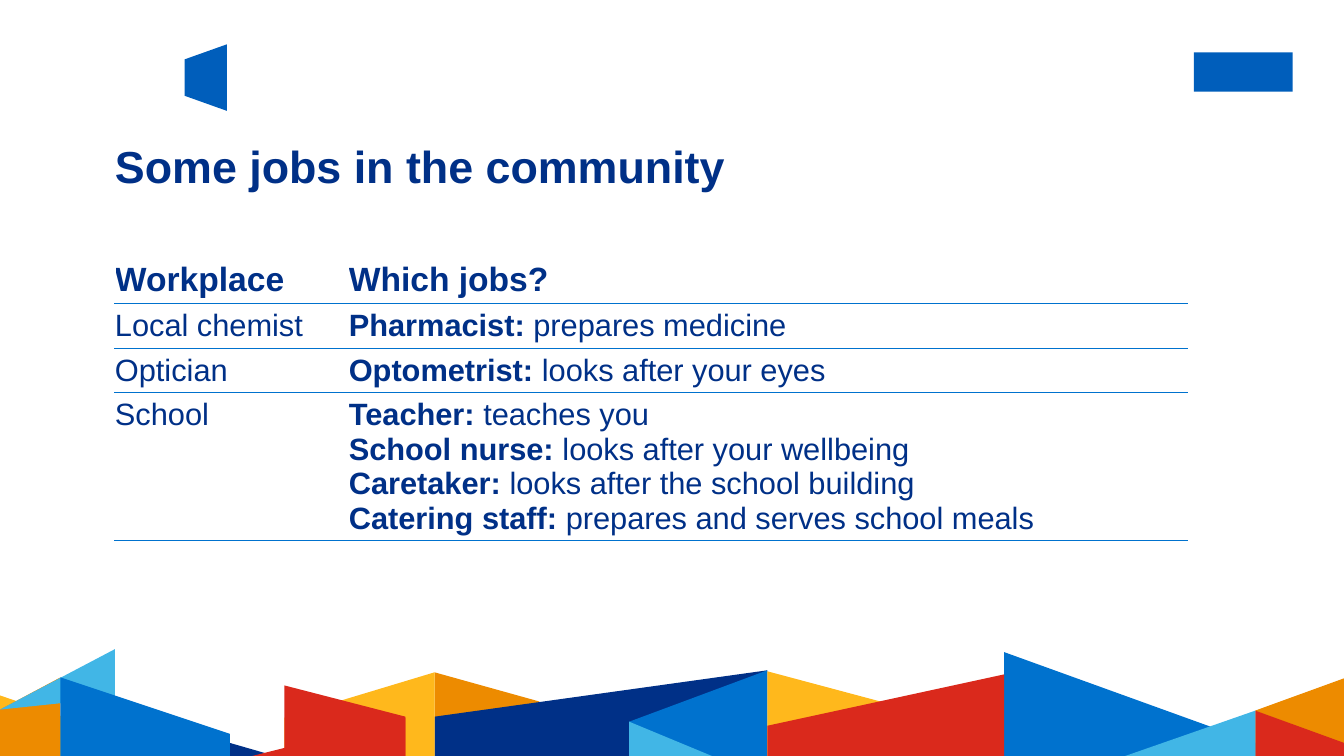
from pptx import Presentation
from pptx.dml.color import RGBColor
from pptx.enum.shapes import MSO_SHAPE
from pptx.enum.text import MSO_ANCHOR, PP_ALIGN
from pptx.oxml import parse_xml
from pptx.oxml.ns import nsdecls
from pptx.util import Inches, Pt

RECTANGLE = MSO_SHAPE.RECTANGLE
TOP = MSO_ANCHOR.TOP
LEFT = PP_ALIGN.LEFT

# Content
TITLE = "Some jobs in the community"
HEADERS = ["Workplace", "Which jobs?"]
WORKPLACES = [
    ("Local chemist", [("Pharmacist: ", "prepares medicine")]),
    ("Optician", [("Optometrist: ", "looks after your eyes")]),
    ("School", [
        ("Teacher: ", "teaches you"),
        ("School nurse: ", "looks after your wellbeing"),
        ("Caretaker: ", "looks after the school building"),
        ("Catering staff: ", "prepares and serves school meals"),
    ]),
]

# Palette
FONT = "Arial"
NAVY, BLUE, SKY, BADGE = "003087", "0072CE", "41B6E6", "005EBB"
ORANGE, YELLOW, RED = "ED8B00", "FFB81C", "DA291C"

# Layout, in inches
W, H = 13.33, 7.5
MARGIN, CONTENT_W = 1.14, 10.64
COLUMNS = [2.32, 8.32]
HEADER_H, LINE_H, PADDING = 0.42, 0.34, 0.05

# Footer wedges, back to front: colour and corner points
WEDGES = [
    (ORANGE, [(4.31, H), (4.31, 6.67), (5.35, 6.96), (5.35, 7.21)]),
    (NAVY, [(4.31, H), (4.31, 7.11), (7.61, 6.65), (7.61, H)]),
    (ORANGE, [(12.45, H), (12.45, 7.05), (W, 6.73), (W, H)]),
    (YELLOW, [(0, H), (0, 6.9), (0.95, 7.22), (0.95, H)]),
    (YELLOW, [(2.82, H), (2.82, 7.12), (4.31, 6.67), (4.31, H)]),
    (ORANGE, [(0, H), (0, 7.04), (0.6, 6.72), (0.6, H)]),
    (RED, [(2.82, H), (2.82, 6.8), (4.02, 7.11), (4.02, H)]),
    (NAVY, [(1.76, H), (1.76, 7.22), (2.73, H)]),
    (RED, [(2.5, H), (4.02, 7.12), (4.02, H)]),
    (SKY, [(0, 7.04), (1.14, 6.44), (1.14, 6.92)]),
    (BLUE, [(0.6, H), (0.6, 6.72), (2.28, 7.28), (2.28, H)]),
    (BLUE, [(6.24, H), (6.24, 7.16), (7.61, 6.65), (7.61, H)]),
    (SKY, [(6.24, H), (6.24, 7.16), (7.06, H)]),
    (BLUE, [(9.96, H), (9.96, 6.47), (12.45, 7.37), (12.45, H)]),
    (RED, [(12.45, H), (12.45, 7.05), (W, 7.37), (W, H)]),
    (SKY, [(11.16, H), (12.45, 7.05), (12.45, H)]),
    (YELLOW, [(7.61, H), (7.61, 6.66), (8.92, 7.01), (8.92, H)]),
    (RED, [(7.61, H), (7.61, 7.2), (9.96, 6.69), (9.96, H)]),
]
DOOR = [(1.83, 0.59), (2.25, 0.44), (2.25, 1.1), (1.83, 0.95)]


def rgb(color):
    return RGBColor.from_string(color)


def paint(shape, color):
    shape.fill.solid()
    shape.fill.fore_color.rgb = rgb(color)
    shape.line.fill.background()
    shape.shadow.inherit = False


def add_polygon(s, color, points):
    corners = [(Inches(x), Inches(y)) for x, y in points]
    builder = s.shapes.build_freeform(*corners[0])
    builder.add_line_segments(corners[1:], close=True)
    paint(builder.convert_to_shape(), color)


def style_run(r, size, bold):
    r.font.name = FONT
    r.font.size = Pt(size)
    r.font.bold = bold
    r.font.color.rgb = rgb(NAVY)


def add_rule(cell, side):
    cell._tc.get_or_add_tcPr().insert(0, parse_xml(
        f'<a:{side} {nsdecls("a")} w="12700"><a:solidFill>'
        f'<a:srgbClr val="{BLUE}"/></a:solidFill></a:{side}>'))


def fill_cell(cell, lines, size, top):
    """Write one paragraph per line; a line is a list of (text, bold) runs."""
    cell.margin_left, cell.margin_right = 0, Inches(0.1)
    cell.margin_top, cell.margin_bottom = Inches(top), Inches(PADDING)
    cell.vertical_anchor = TOP
    cell.fill.background()
    tf = cell.text_frame
    for i, line in enumerate(lines):
        p = tf.add_paragraph() if i else tf.paragraphs[0]
        for text, bold in line:
            r = p.add_run()
            r.text = text
            style_run(r, size, bold)


prs = Presentation()
prs.slide_width, prs.slide_height = Inches(W), Inches(H)
s = prs.slides.add_slide(prs.slide_layouts[5])

# Header badges
add_polygon(s, BADGE, DOOR)
badge = s.shapes.add_shape(RECTANGLE, Inches(11.84), Inches(0.52),
                           Inches(0.98), Inches(0.39))
paint(badge, BADGE)

# Footer
for color, points in WEDGES:
    add_polygon(s, color, points)

# Title
title = s.shapes.title
title.left, title.top = Inches(MARGIN), Inches(1.44)
title.width, title.height = Inches(CONTENT_W), Inches(0.6)
tf = title.text_frame
tf.text = TITLE
tf.margin_left = tf.margin_right = tf.margin_top = tf.margin_bottom = 0
tf.vertical_anchor = TOP
tf.word_wrap = True
p = tf.paragraphs[0]
p.alignment = LEFT
p.line_spacing = 0.9
style_run(p.runs[0], 32, True)

# Jobs table
heights = [HEADER_H] + [LINE_H * len(jobs) + 2 * PADDING for _, jobs in WORKPLACES]
table = s.shapes.add_table(len(heights), len(COLUMNS), Inches(MARGIN), Inches(2.59),
                           Inches(CONTENT_W), Inches(sum(heights))).table
table.first_row = table.horz_banding = False
for column, width in zip(table.columns, COLUMNS):
    column.width = Inches(width)
for row, height in zip(table.rows, heights):
    row.height = Inches(height)

for col, header in enumerate(HEADERS):
    fill_cell(table.cell(0, col), [[(header, True)]], 24, 0)
for row, (place, jobs) in enumerate(WORKPLACES, start=1):
    fill_cell(table.cell(row, 0), [[(place, False)]], 22, PADDING)
    job_lines = [[(job, True), (task, False)] for job, task in jobs]
    fill_cell(table.cell(row, 1), job_lines, 22, PADDING)

# Rules under every row
for row in range(len(heights)):
    for col in range(len(COLUMNS)):
        add_rule(table.cell(row, col), "lnB")
        if row:
            add_rule(table.cell(row, col), "lnT")

prs.save("out.pptx")
